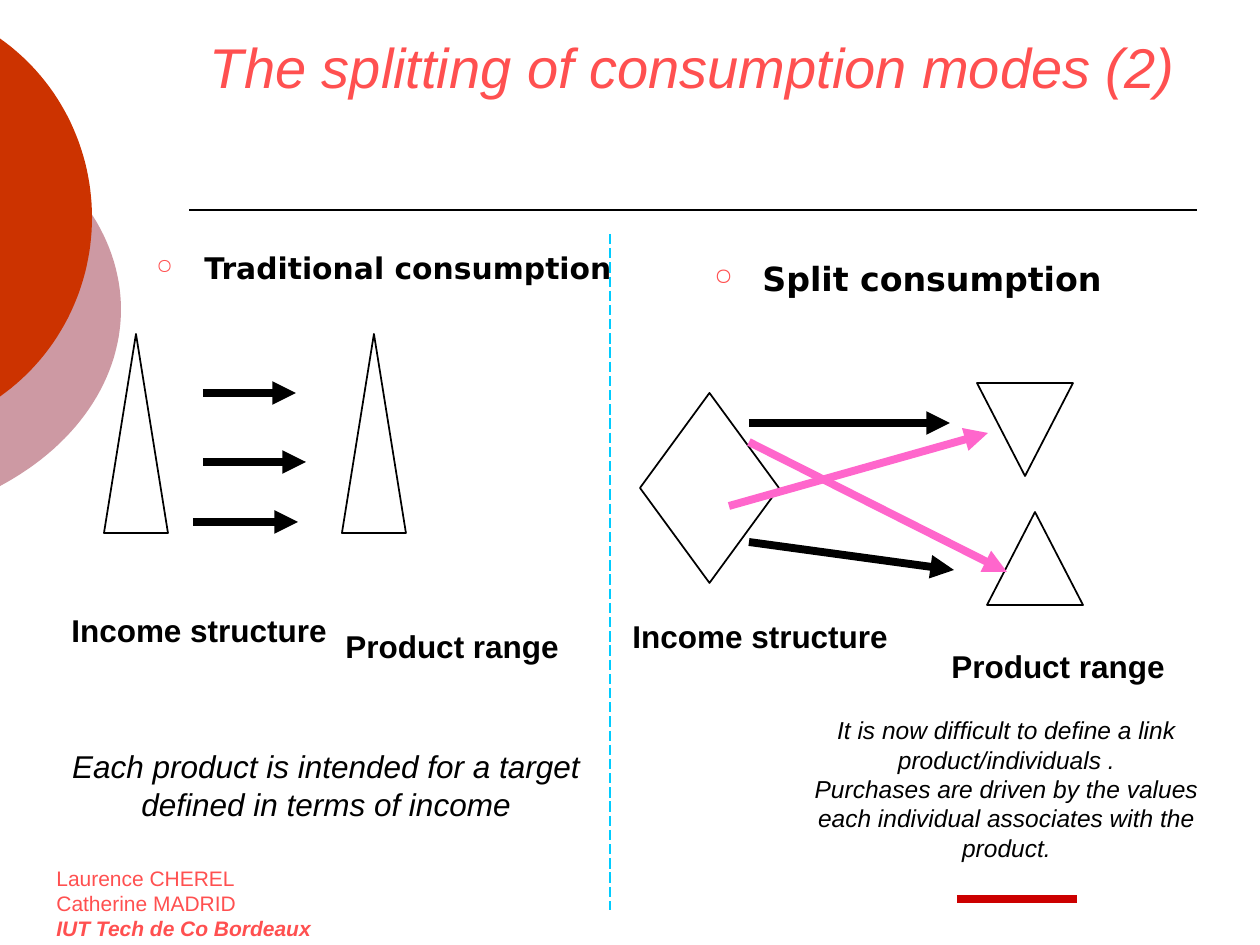
import math
import pptx
import pptx.util
import pptx.dml.color
import pptx.enum.dml
import pptx.enum.shapes
import pptx.enum.text
import pptx.oxml
import pptx.oxml.ns

PX = 914400 / 126
SHAPE = pptx.enum.shapes.MSO_SHAPE
LEFT, CENTER = pptx.enum.text.PP_ALIGN.LEFT, pptx.enum.text.PP_ALIGN.CENTER
BLACK, WHITE, CORAL, PINK = "000000", "FFFFFF", "FF5050", "FF66CC"

TITLE = "The splitting of consumption modes (2)"
DISCS = [
    ((-446, 94, 567, 431), "CD99A3"),
    ((-334, 0, 426, 435), "CC3300"),
]
HEADINGS = [
    ((144, 244, 495, 567), "Traditional consumption", 17),
    ((702, 252, 495, 567), "Split consumption", 19),
]
FIGURES = [
    (SHAPE.ISOSCELES_TRIANGLE, (104, 334, 64, 199), 0),
    (SHAPE.ISOSCELES_TRIANGLE, (342, 334, 64, 199), 0),
    (SHAPE.DIAMOND, (640, 393, 139, 190), 0),
    (SHAPE.ISOSCELES_TRIANGLE, (987, 512, 96, 93), 0),
    (SHAPE.ISOSCELES_TRIANGLE, (977, 383, 96, 93), 180),
]
RULES = [
    ((189, 210, 1197, 210), BLACK, 1, False),
    ((610, 234, 610, 910), "00CCFF", 0.75, True),
    ((957, 899, 1077, 899), "CC0000", 4.5, False),
]
ARROWS = [
    ((193, 522, 298, 522), BLACK),
    ((203, 462, 306, 462), BLACK),
    ((203, 393, 296, 393), BLACK),
    ((749, 542, 954, 570), BLACK),
    ((729, 506, 988, 433), PINK),
    ((749, 423, 950, 423), BLACK),
    ((749, 442, 1007, 572), PINK),
]
LABELS = [
    ((333, 621, 240, 50), "Product range"),
    ((59, 605, 292, 50), "Income structure"),
    ((620, 611, 284, 50), "Income structure"),
    ((939, 641, 240, 50), "Product range"),
]
COMMENTS = [
    ((44, 741, 564, 89), 18, False,
     ["Each product is intended for a target", "defined in terms of income"]),
    ((789, 709, 435, 161), 14, True,
     ["It is now difficult to define a link product/individuals .",
      "Purchases are driven by the values each individual associates with the product."]),
]
AUTHORS = ["Laurence CHEREL", "Catherine MADRID"]
SCHOOL = "IUT Tech de Co Bordeaux"


def emu(values):
    return [round(v * PX) for v in values]


def rgb(color):
    return pptx.dml.color.RGBColor.from_string(color)


def add_run(p, text, size, color=BLACK, font="Arial", bold=False, italic=False):
    r = p.add_run()
    r.text = text
    f = r.font
    f.name, f.size, f.bold, f.italic = font, pptx.util.Pt(size), bold, italic
    f.color.rgb = rgb(color)


def add_text(s, box, lines, size, align=LEFT, wrap=True, grow=True, **style):
    tf = s.shapes.add_textbox(*emu(box)).text_frame
    tf.word_wrap = wrap
    if grow:
        tf.auto_size = pptx.enum.text.MSO_AUTO_SIZE.SHAPE_TO_FIT_TEXT
    for i, line in enumerate(lines):
        p = tf.add_paragraph() if i else tf.paragraphs[0]
        p.alignment = align
        add_run(p, line, size, **style)
    return tf


def add_bullet(p):
    pPr = p._p.get_or_add_pPr()
    pPr.set("marL", str(round(48 * PX)))
    pPr.set("indent", str(round(-48 * PX)))
    ns = pptx.oxml.ns.nsdecls("a")
    for xml in (
        f'<a:buClr {ns}><a:srgbClr val="{CORAL}"/></a:buClr>',
        f'<a:buSzPct {ns} val="70000"/>',
        f'<a:buChar {ns} char="○"/>',
    ):
        pPr.append(pptx.oxml.parse_xml(xml))


def add_disc(s, box, color):
    x, y, w, h = box
    cx, cy, rx, ry = x + w / 2, y + h / 2, w / 2, h / 2
    edge = math.acos(-cx / rx)
    steps = 60
    angles = [edge * (2 * i / steps - 1) for i in range(steps + 1)]
    points = [emu((cx + rx * math.cos(a), cy + ry * math.sin(a))) for a in angles]
    builder = s.shapes.build_freeform(*points[0])
    builder.add_line_segments(points[1:], close=True)
    sp = builder.convert_to_shape()
    sp.shadow.inherit = False
    sp.fill.solid()
    sp.fill.fore_color.rgb = rgb(color)
    sp.line.fill.background()


def add_figure(s, kind, box, rotation):
    sp = s.shapes.add_shape(kind, *emu(box))
    sp.rotation = rotation
    sp.shadow.inherit = False
    sp.fill.solid()
    sp.fill.fore_color.rgb = rgb(WHITE)
    sp.line.color.rgb = rgb(BLACK)
    sp.line.width = pptx.util.Pt(1)


def add_line(s, ends, color, width, dashed=False, arrow=False):
    c = s.shapes.add_connector(pptx.enum.shapes.MSO_CONNECTOR.STRAIGHT, *emu(ends))
    c.line.color.rgb = rgb(color)
    c.line.width = pptx.util.Pt(width)
    if dashed:
        c.line.dash_style = pptx.enum.dml.MSO_LINE.LONG_DASH
    ns = pptx.oxml.ns.nsdecls("a")
    if arrow:
        c.line._get_or_add_ln().append(
            pptx.oxml.parse_xml(f'<a:tailEnd {ns} type="triangle"/>'))
    c._element.spPr.append(pptx.oxml.parse_xml(f"<a:effectLst {ns}/>"))


def main():
    prs = pptx.Presentation()
    prs.slide_width, prs.slide_height = emu((1260, 945))
    s = prs.slides.add_slide(prs.slide_layouts[5])

    title = s.shapes.title
    title.left, title.top, title.width, title.height = emu((189, 42, 1008, 158))
    tf = title.text_frame
    tf.vertical_anchor = pptx.enum.text.MSO_ANCHOR.BOTTOM
    tf.margin_bottom = emu([100])[0]
    tf.paragraphs[0].alignment = CENTER
    add_run(tf.paragraphs[0], TITLE, 32, CORAL, italic=True)

    for box, color in DISCS:
        add_disc(s, box, color)
    for box, text, size in HEADINGS:
        tf = add_text(s, box, [text], size, grow=False, font="DejaVu Sans", bold=True)
        add_bullet(tf.paragraphs[0])
    for kind, box, rotation in FIGURES:
        add_figure(s, kind, box, rotation)
    for ends, color, width, dashed in RULES:
        add_line(s, ends, color, width, dashed=dashed)
    for ends, color in ARROWS:
        add_line(s, ends, color, 4.5, arrow=True)
    for box, text in LABELS:
        add_text(s, box, [text], 18, wrap=False, bold=True)
    for box, size, wrap, lines in COMMENTS:
        add_text(s, box, lines, size, CENTER, wrap, italic=True)

    tf = add_text(s, (44, 859, 407, 66), AUTHORS, 12, grow=False, color=CORAL)
    add_run(tf.add_paragraph(), SCHOOL, 12, CORAL, bold=True, italic=True)

    prs.save("out.pptx")


if __name__ == "__main__":
    main()
